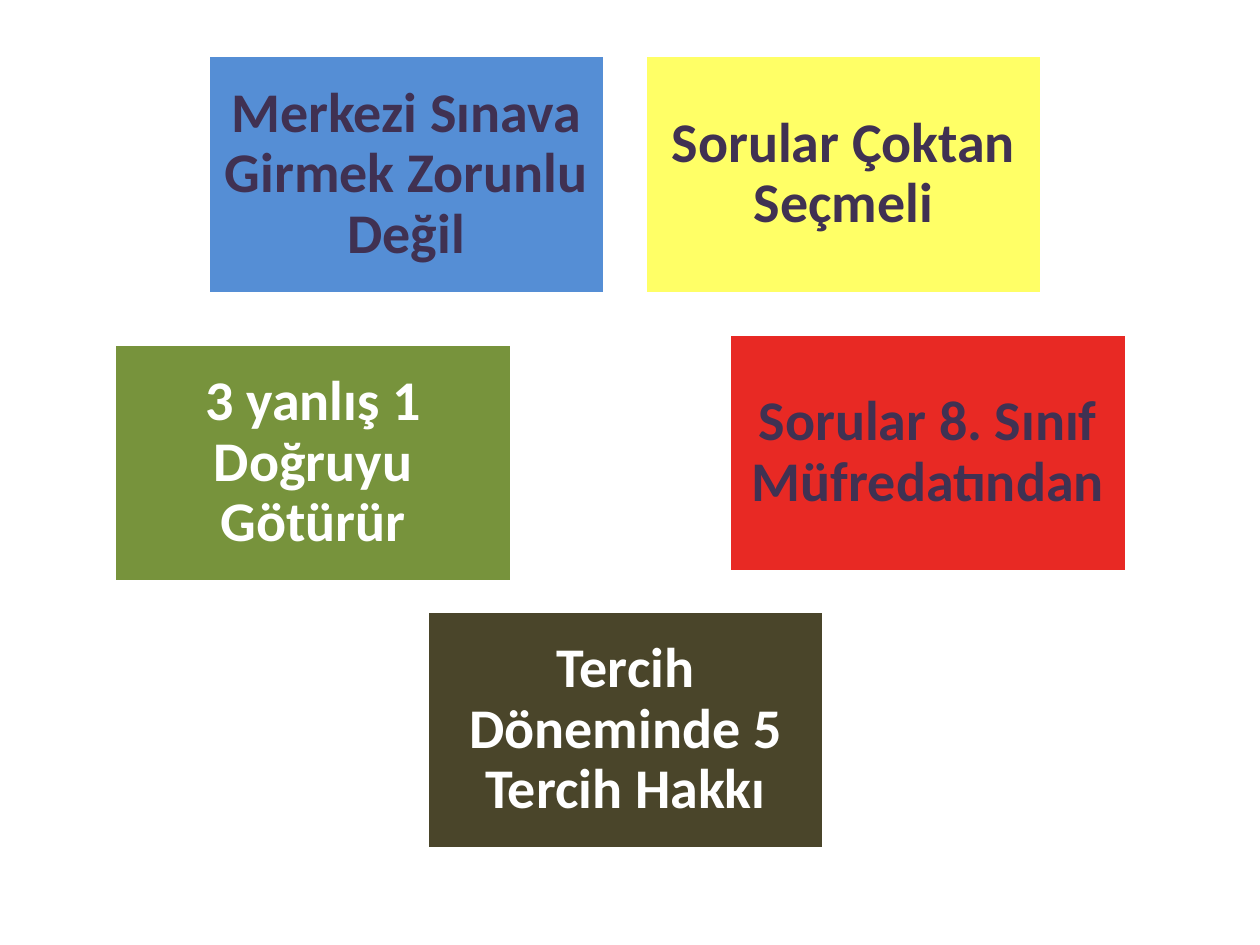
from dataclasses import dataclass

from pptx import Presentation
from pptx.dml.color import RGBColor
from pptx.enum import shapes, text
from pptx.util import Inches, Pt


@dataclass(frozen=True)
class Theme:
    """Colours and type sizes of the slide."""
    blue: str = "558ED5"
    yellow: str = "FFFF66"
    green: str = "77933C"
    red: str = "E82924"
    brown: str = "4A452A"
    purple: str = "403152"
    white: str = "FFFFFF"
    font: str = "Calibri"
    size: int = 32
    outline: int = 2


THEME = Theme()
CARD_WIDTH, CARD_HEIGHT = 3.15, 1.89
CARDS = [
    ("Merkezi Sınava Girmek Zorunlu Değil", 1.65, 0.44, THEME.blue, THEME.purple),
    ("Sorular Çoktan Seçmeli", 5.12, 0.44, THEME.yellow, THEME.purple),
    ("3 yanlış 1 Doğruyu Götürür", 0.91, 2.73, THEME.green, THEME.white),
    ("Sorular 8. Sınıf Müfredatından", 5.79, 2.65, THEME.red, THEME.purple),
    ("Tercih Döneminde 5 Tercih Hakkı", 3.39, 4.85, THEME.brown, THEME.white),
]


def add_card(page, wording, left, top, width, height, fill, ink):
    """Place one coloured card with centred bold wording."""
    card = page.shapes.add_shape(
        shapes.MSO_SHAPE.RECTANGLE,
        Inches(left), Inches(top), Inches(width), Inches(height))
    card.shadow.inherit = False
    card.fill.solid()
    card.fill.fore_color.rgb = RGBColor.from_string(fill)
    card.line.color.rgb = RGBColor.from_string(THEME.white)
    card.line.width = Pt(THEME.outline)

    frame = card.text_frame
    frame.text = wording
    frame.word_wrap = True
    frame.vertical_anchor = text.MSO_ANCHOR.MIDDLE
    frame.margin_left = frame.margin_right = Inches(0.13)
    frame.margin_top = frame.margin_bottom = Inches(0.13)

    para = frame.paragraphs[0]
    para.alignment = text.PP_ALIGN.CENTER
    para.line_spacing = 0.9
    font = para.runs[0].font
    font.name = THEME.font
    font.size = Pt(THEME.size)
    font.bold = True
    font.color.rgb = RGBColor.from_string(ink)


def main():
    """Build the slide of exam facts and save it."""
    deck = Presentation()
    deck.slide_width, deck.slide_height = Inches(10), Inches(7.5)
    page = deck.slides.add_slide(deck.slide_layouts[6])
    for wording, left, top, fill, ink in CARDS:
        add_card(page, wording, left, top, CARD_WIDTH, CARD_HEIGHT, fill, ink)
    deck.save("out.pptx")


if __name__ == "__main__":
    main()
